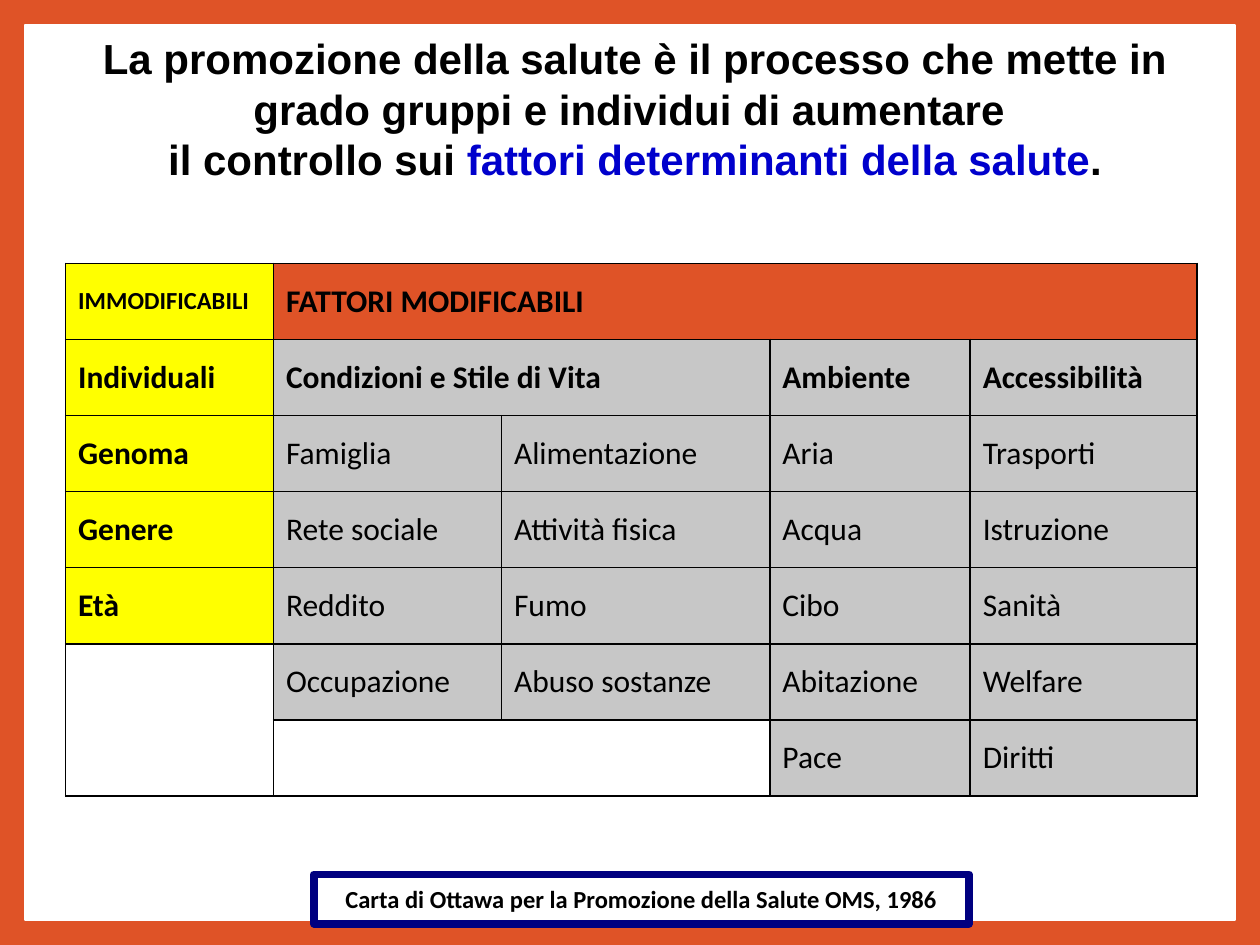
from dataclasses import dataclass

from lxml import etree
from pptx import Presentation
from pptx import util as u
from pptx.dml.color import RGBColor
from pptx.enum import shapes, text
from pptx.oxml import ns


@dataclass(frozen=True)
class Theme:
    """Colours, fonts and type sizes of the slide."""
    orange: str = "DF5327"
    white: str = "FFFFFF"
    black: str = "000000"
    yellow: str = "FFFF00"
    grey: str = "C7C7C7"
    blue: str = "0000CC"
    navy: str = "000080"
    heading: str = "Arial"
    body: str = "Calibri"
    title: int = 24
    cell: int = 18
    small: int = 14


class Deck:
    """Style and current slide, with a method for each kind of element."""

    def __init__(self, prs, theme):
        self.t = theme
        self.s = prs.slides.add_slide(prs.slide_layouts[6])
        fill = self.s.background.fill
        fill.solid()
        fill.fore_color.rgb = RGBColor.from_string(theme.orange)

    def run(self, p, words, size, font, bold=True, color=None):
        r = p.add_run()
        r.text = words
        r.font.size = u.Pt(size)
        r.font.name = font
        r.font.bold = bold
        r.font.color.rgb = RGBColor.from_string(color or self.t.black)

    def box(self, at, line, width, fill=None):
        sp = self.s.shapes.add_shape(shapes.MSO_SHAPE.RECTANGLE, *map(u.Inches, at))
        sp.shadow.inherit = False
        if fill:
            sp.fill.solid()
            sp.fill.fore_color.rgb = RGBColor.from_string(fill)
        else:
            sp.fill.background()
        sp.line.color.rgb = RGBColor.from_string(line)
        sp.line.width = u.Pt(width)
        return sp

    def caption(self, at, words):
        tf = self.box(at, self.t.navy, 4.5).text_frame
        tf.word_wrap = True
        tf.vertical_anchor = text.MSO_ANCHOR.MIDDLE
        p = tf.paragraphs[0]
        p.alignment = text.PP_ALIGN.CENTER
        self.run(p, words, self.t.small, self.t.body)

    def title(self, at, paragraphs):
        tf = self.s.shapes.add_textbox(*map(u.Inches, at)).text_frame
        tf.word_wrap = True
        tf.auto_size = text.MSO_AUTO_SIZE.SHAPE_TO_FIT_TEXT
        for i, runs in enumerate(paragraphs):
            p = tf.add_paragraph() if i else tf.paragraphs[0]
            p.alignment = text.PP_ALIGN.CENTER
            for words, color in runs:
                self.run(p, words, self.t.title, self.t.heading, color=color)

    def cell(self, c, words, size, bold, fill):
        tcPr = c._tc.get_or_add_tcPr()
        for side in ("lnL", "lnR", "lnT", "lnB"):
            ln = etree.SubElement(tcPr, ns.qn(f"a:{side}"), w=str(u.Pt(1)))
            solid = etree.SubElement(ln, ns.qn("a:solidFill"))
            etree.SubElement(solid, ns.qn("a:srgbClr"), val=self.t.black)
        c.fill.solid()
        c.fill.fore_color.rgb = RGBColor.from_string(fill)
        c.vertical_anchor = text.MSO_ANCHOR.MIDDLE
        if words:
            self.run(c.text_frame.paragraphs[0], words, size, self.t.body, bold)

    def table(self, at, widths, rows, merges):
        t = self.t
        tbl = self.s.shapes.add_table(len(rows), len(widths), *map(u.Inches, at)).table
        for col, width in zip(tbl.columns, widths):
            col.width = u.Inches(width)
        for i, row in enumerate(rows):
            for j, words in enumerate(row):
                if not words:
                    fill = t.white
                elif j == 0:
                    fill = t.yellow
                else:
                    fill = t.grey if i else t.orange
                size = t.small if i == j == 0 else t.cell
                self.cell(tbl.cell(i, j), words, size, i < 2 or j == 0, fill)
        for first, last in merges:
            tbl.cell(*first).merge(tbl.cell(*last))


def main():
    prs = Presentation()
    prs.slide_width, prs.slide_height = u.Inches(10), u.Inches(7.5)
    t = Theme()
    deck = Deck(prs, t)
    deck.box((0.2, 0.2, 9.6, 7.1), t.white, 1, fill=t.white)
    rows = [
        ("IMMODIFICABILI", "FATTORI MODIFICABILI", "", "", ""),
        ("Individuali", "Condizioni e Stile di Vita", "", "Ambiente", "Accessibilità"),
        ("Genoma", "Famiglia", "Alimentazione", "Aria", "Trasporti"),
        ("Genere", "Rete sociale", "Attività fisica", "Acqua", "Istruzione"),
        ("Età", "Reddito", "Fumo", "Cibo", "Sanità"),
        ("", "Occupazione", "Abuso sostanze", "Abitazione", "Welfare"),
        ("", "", "", "Pace", "Diritti"),
    ]
    merges = [((0, 1), (0, 4)), ((1, 1), (1, 2)), ((5, 0), (6, 0)), ((6, 1), (6, 2))]
    deck.table((0.52, 2.09, 8.98, 4.23), (1.65, 1.81, 2.13, 1.59, 1.8), rows, merges)
    deck.title((0.51, 0.21, 9.06, 1.31), [
        [("La promozione della salute è il processo che mette in grado gruppi "
          "e individui di aumentare ", t.black)],
        [("il controllo sui ", t.black),
         ("fattori determinanti della salute", t.blue), (".", t.black)],
    ])
    deck.caption((2.49, 6.94, 5.2, 0.39),
                 "Carta di Ottawa per la Promozione della Salute OMS, 1986")
    prs.save("out.pptx")


if __name__ == "__main__":
    main()
